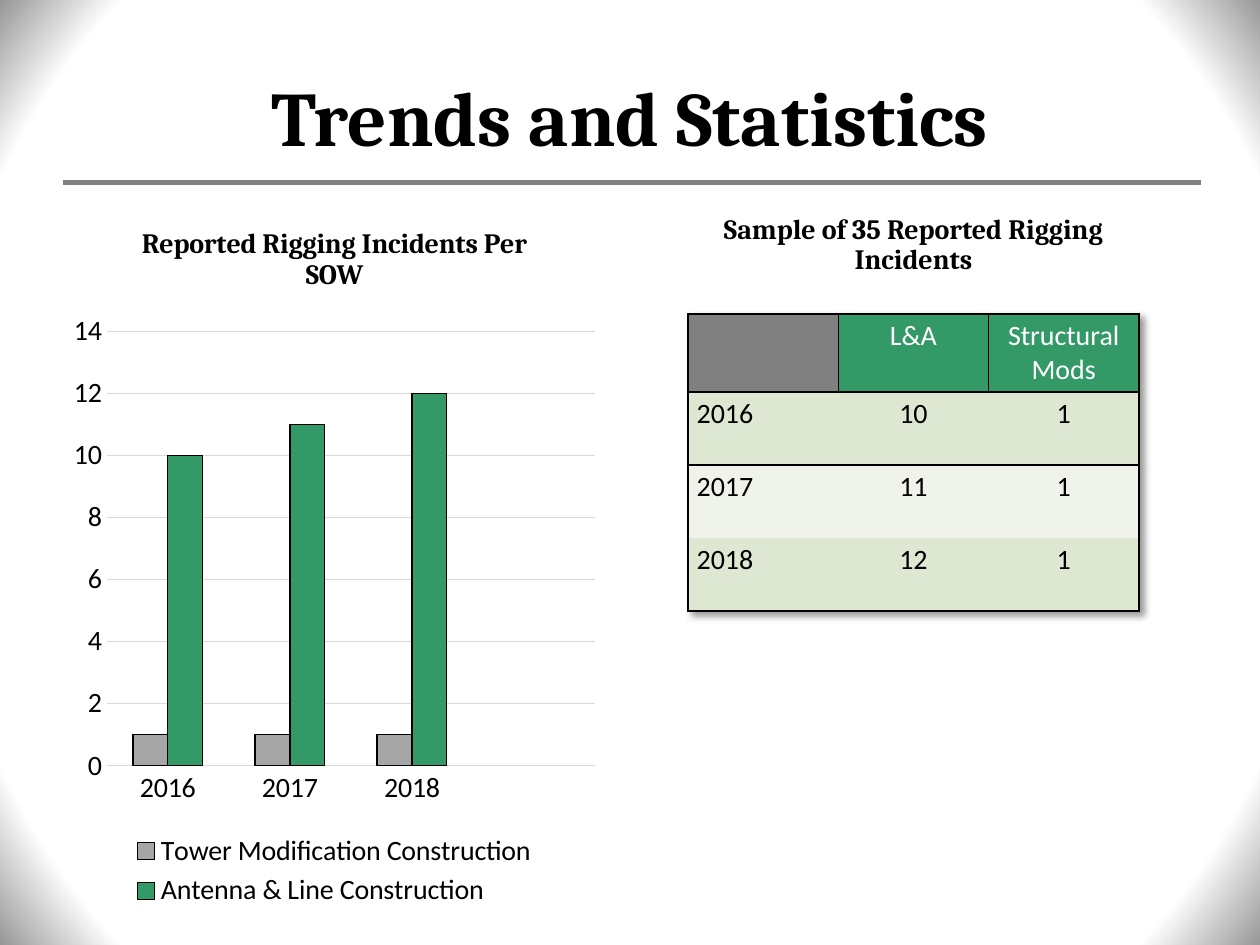
from lxml import etree
from pptx import Presentation
from pptx.chart.data import CategoryChartData
from pptx.dml.color import RGBColor
from pptx.enum.chart import XL_CHART_TYPE, XL_LEGEND_POSITION, XL_TICK_MARK
from pptx.enum.shapes import MSO_CONNECTOR
from pptx.enum.text import MSO_ANCHOR, PP_ALIGN
from pptx.oxml import parse_xml
from pptx.oxml.ns import qn
from pptx.util import Inches, Pt

COLUMNS = XL_CHART_TYPE.COLUMN_CLUSTERED
BOTTOM = XL_LEGEND_POSITION.BOTTOM
NO_TICKS = XL_TICK_MARK.NONE
STRAIGHT = MSO_CONNECTOR.STRAIGHT
MIDDLE = MSO_ANCHOR.MIDDLE
LEFT, CENTER = PP_ALIGN.LEFT, PP_ALIGN.CENTER
DRAWING = 'xmlns:a="http://schemas.openxmlformats.org/drawingml/2006/main"'
PLAIN_TABLE = "{2D5ABB26-0587-4C30-8999-92F81FD0307C}"

THEME = {
    "heading": "Cambria", "body": "Calibri",
    "title_size": 44, "text_size": 16,
    "ink": "000000", "paper": "FFFFFF", "corner": "979797",
    "rule": "808080", "grid": "D9D9D9", "gray": "A6A6A6",
    "green": "339966", "bands": ("DEE7D1", "EFF3EA"),
}

deck = Presentation()
deck.slide_width, deck.slide_height = Inches(10), Inches(7.5)
UNIT = deck.slide_width / 100


def grid(*cells):
    return [round(cell * UNIT) for cell in cells]


def style(font, face="body", size="text_size", color="ink", bold=False):
    font.name, font.size, font.bold = THEME[face], Pt(THEME[size]), bold
    font.color.rgb = RGBColor.from_string(THEME[color])


slide = deck.slides.add_slide(deck.slide_layouts[5])

backdrop = slide.background.fill
backdrop.gradient()
for stop, color, position in zip(backdrop.gradient_stops, ("paper", "corner"), (0.88, 1)):
    stop.color.rgb = RGBColor.from_string(THEME[color])
    stop.position = position
linear = next(slide.background._cSld.iter(qn("a:lin")))
linear.getparent().replace(linear, parse_xml(
    f'<a:path {DRAWING} path="circle">'
    '<a:fillToRect l="50000" t="50000" r="50000" b="50000"/></a:path>'))

rule = slide.shapes.add_connector(STRAIGHT, *grid(5, 14.5, 95.3, 14.5))
rule.line.color.rgb = RGBColor.from_string(THEME["rule"])
rule.line.width = Pt(3)
etree.SubElement(rule._element.spPr, qn("a:effectLst"))

title = slide.shapes.title
title.left, title.top, title.width, title.height = grid(5, 3.3, 90, 11.7)
title.text_frame.vertical_anchor = MIDDLE
heading = title.text_frame.paragraphs[0]
heading.alignment = CENTER
heading_run = heading.add_run()
heading_run.text = "Trends and Statistics"
style(heading_run.font, "heading", "title_size", bold=True)

incidents = CategoryChartData()
incidents.categories = ["2016", "2017", "2018", ""]
incidents.add_series("Tower Modification Construction", [1, 1, 1, None])
incidents.add_series("Antenna & Line Construction", [10, 11, 12, None])
chart = slide.shapes.add_chart(COLUMNS, *grid(5, 15.8, 43.1, 56.7), incidents).chart
style(chart.font)

chart.has_title = True
chart.chart_title.include_in_layout = False
chart_heading = chart.chart_title.text_frame.paragraphs[0].add_run()
chart_heading.text = "Reported Rigging Incidents Per SOW"
style(chart_heading.font, "heading", bold=True)

chart.has_legend = True
chart.legend.position = BOTTOM
chart.legend.include_in_layout = False
style(chart.legend.font)

years, counts = chart.category_axis, chart.value_axis
for axis in (years, counts):
    axis.major_tick_mark = axis.minor_tick_mark = NO_TICKS
    axis.format.line.fill.background()
    style(axis.tick_labels.font)
counts.minimum_scale, counts.maximum_scale, counts.major_unit = 0, 14, 2
counts.has_major_gridlines = True
years.format.line.color.rgb = RGBColor.from_string(THEME["grid"])
counts.major_gridlines.format.line.color.rgb = RGBColor.from_string(THEME["grid"])
counts.major_gridlines.format.line.width = Pt(0.75)

plot = chart.plots[0]
plot.gap_width, plot.overlap, plot.vary_by_categories = 150, 0, False
for series, color in zip(plot.series, ("gray", "green")):
    series.format.fill.solid()
    series.format.fill.fore_color.rgb = RGBColor.from_string(THEME[color])
    series.format.line.color.rgb = RGBColor.from_string(THEME["ink"])
    series.format.line.width = Pt(0.75)

caption = slide.shapes.add_textbox(*grid(52.5, 16.7, 40, 4.4)).text_frame
caption.word_wrap = True
caption.margin_left, caption.margin_top, caption.margin_right, caption.margin_bottom = grid(
    0.7, 0.4, 0.7, 0.4)
sample = caption.paragraphs[0]
sample.alignment, sample.line_spacing, sample.space_before = CENTER, 0.9, Pt(5)
sample_run = sample.add_run()
sample_run.text = "Sample of 35 Reported Rigging Incidents"
style(sample_run.font, "heading", bold=True)

records = [
    ["", "L&A", "Structural Mods"],
    ["2016", "10", "1"],
    ["2017", "11", "1"],
    ["2018", "12", "1"],
]
last_row, last_column = len(records) - 1, len(records[0]) - 1
table = slide.shapes.add_table(
    len(records), len(records[0]), *grid(54.6, 24.9, 35.8, 23.6)).table
properties = table._tbl.tblPr
properties.find(qn("a:tableStyleId")).text = PLAIN_TABLE
properties.insert(0, parse_xml(
    f'<a:effectLst {DRAWING}><a:outerShdw blurRad="50800" dist="38100" dir="2700000" '
    'algn="tl" rotWithShape="0"><a:srgbClr val="000000"><a:alpha val="40000"/>'
    '</a:srgbClr></a:outerShdw></a:effectLst>'))

for r, record in enumerate(records):
    header = r == 0
    table.rows[r].height = grid(6.2 if header else 5.8)[0]
    for c, entry in enumerate(record):
        cell = table.cell(r, c)
        cell.margin_left, cell.margin_top, cell.margin_right, cell.margin_bottom = grid(
            0.7, 0.4, 0.7, 0.4)
        if header:
            shade = THEME["green" if entry else "rule"]
        else:
            shade = THEME["bands"][(r - 1) % 2]
        cell.fill.solid()
        cell.fill.fore_color.rgb = RGBColor.from_string(shade)
        edges = {
            "lnL": header or c == 0,
            "lnR": header or c == last_column,
            "lnT": r <= 1,
            "lnB": header or r == last_row,
        }
        drawn = [edge for edge, shown in edges.items() if shown]
        for position, edge in enumerate(drawn):
            cell._tc.tcPr.insert(position, parse_xml(
                f'<a:{edge} {DRAWING} w="12700"><a:solidFill>'
                f'<a:srgbClr val="{THEME["ink"]}"/></a:solidFill></a:{edge}>'))
        if entry:
            line = cell.text_frame.paragraphs[0]
            line.alignment = CENTER if header or c else LEFT
            entry_run = line.add_run()
            entry_run.text = entry
            style(entry_run.font, color="paper" if header else "ink")

for column in table.columns:
    column.width = grid(11.93)[0]

deck.save("out.pptx")
